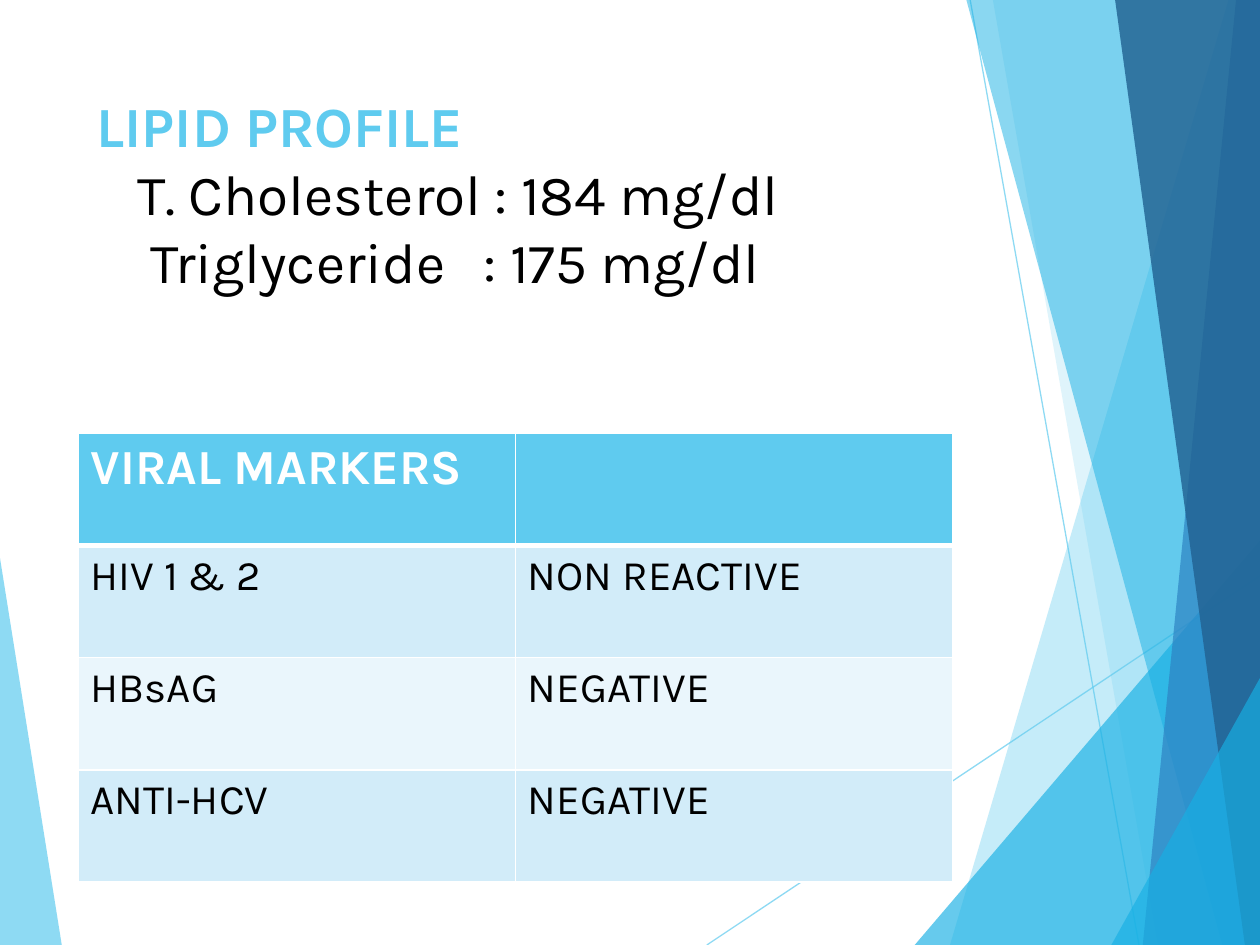
from lxml import etree
from pptx import Presentation
from pptx import util as u
from pptx.dml.color import RGBColor
from pptx.enum import shapes, text
from pptx.oxml.ns import qn

SKY, CYAN, BLUE, NAVY = "5FCBEF", "17B0E4", "2E83C3", "226292"

prs = Presentation()
prs.slide_width, prs.slide_height = u.Inches(10), u.Inches(7.5)
slide = prs.slides.add_slide(prs.slide_layouts[6])
W, H = 10, 7.5


def paint(fill, color, opacity=100):
    fill.solid()
    fill.fore_color.rgb = RGBColor.from_string(color)
    if opacity < 100:
        tint = fill._xPr.find(qn("a:solidFill"))[0]
        etree.SubElement(tint, qn("a:alpha"), val=str(opacity * 1000))


def style(paragraph, size, color, bold=False):
    font = paragraph.font
    font.name, font.size, font.bold = "Karla", u.Pt(size), bold
    font.color.rgb = RGBColor.from_string(color)


# Background facets: corner points, colour, opacity; thin rays lie above the first
facets = [
    ([(0, 4.43), (0.49, H), (0, H)], SKY, 70),
    ([(9.75, 0), (7.54, H), (W, H), (W, 0)], SKY, 36),
    ([(7.88, 0), (9.19, H), (W, H), (W, 0)], SKY, 20),
    ([(7.26, H), (W, 4.29), (W, H)], CYAN, 66),
    ([(7.67, 0), (9.7, H), (W, H), (W, 0)], CYAN, 50),
    ([(9.81, 0), (9.07, H), (W, H), (W, 0)], BLUE, 70),
    ([(8.85, 0), (9.88, H), (W, H), (W, 0)], NAVY, 82),
    ([(8.82, H), (W, 5.38), (W, H)], CYAN, 66),
]
rays = [((5.61, H), (W, 4.57)), ((7.7, 0), (9.04, H))]

for order, (corners, color, opacity) in enumerate(facets):
    points = [(u.Inches(x), u.Inches(y)) for x, y in corners]
    outline = slide.shapes.build_freeform(*points[0])
    outline.add_line_segments(points[1:], close=True)
    facet = outline.convert_to_shape()
    facet.shadow.inherit = False
    paint(facet.fill, color, opacity)
    facet.line.fill.background()
    if order == 0:
        for start, end in rays:
            ray = slide.shapes.add_connector(
                shapes.MSO_CONNECTOR.STRAIGHT, *map(u.Inches, start + end))
            ray.line.width = u.Pt(0.75)
            paint(ray.line.fill, SKY, 70)
            etree.SubElement(ray._element.spPr, qn("a:effectLst"))

# Viral markers table: two equal columns, four equal rows
markers = [
    ("VIRAL MARKERS", ""),
    ("HIV 1 & 2", "NON REACTIVE"),
    ("HBsAG", "NEGATIVE"),
    ("ANTI-HCV", "NEGATIVE"),
]
row_fills = [SKY, "D2ECF9", "EAF6FC", "D2ECF9"]
col_width, row_height = 3.47, 0.89
table = slide.shapes.add_table(
    len(markers), 2, u.Inches(0.62), u.Inches(3.44),
    u.Inches(2 * col_width), u.Inches(len(markers) * row_height)).table
for r, (row, row_fill) in enumerate(zip(markers, row_fills)):
    for c, entry in enumerate(row):
        cell = table.cell(r, c)
        cell.text = entry
        # White rules, with a thicker one under the header
        cell_props = cell._tc.get_or_add_tcPr()
        for side in "LRTB":
            thick = (r, side) in [(0, "B"), (1, "T")]
            rule = etree.SubElement(cell_props, qn("a:ln" + side),
                                    w=str(u.Pt(3 if thick else 1)))
            ink = etree.SubElement(rule, qn("a:solidFill"))
            etree.SubElement(ink, qn("a:srgbClr"), val="FFFFFF")
        paint(cell.fill, row_fill)
        if r == 0:
            style(cell.text_frame.paragraphs[0], 28, "FFFFFF", True)
        else:
            style(cell.text_frame.paragraphs[0], 24, "000000")

# Lipid profile: heading and two indented results
lipids = slide.shapes.add_textbox(
    u.Inches(0.67), u.Inches(0.67), u.Inches(2 * col_width), u.Inches(1.44)).text_frame
lipids.word_wrap = True
lipids.vertical_anchor = text.MSO_ANCHOR.TOP
lines = [
    ("LIPID PROFILE", 0, SKY, True),
    ("T. Cholesterol : 184 mg/dl", 0.32, "000000", False),
    ("Triglyceride\t: 175 mg/dl", 0.43, "000000", False),
]
for i, (line, indent, color, bold) in enumerate(lines):
    paragraph = lipids.paragraphs[0] if i == 0 else lipids.add_paragraph()
    paragraph.text = line
    props = paragraph._p.get_or_add_pPr()
    props.set("marL", str(u.Inches(indent)))
    if "\t" in line:
        stops = etree.SubElement(props, qn("a:tabLst"))
        etree.SubElement(stops, qn("a:tab"), pos=str(u.Inches(2.64)), algn="l")
    style(paragraph, 32.4, color, bold)

prs.save("out.pptx")
